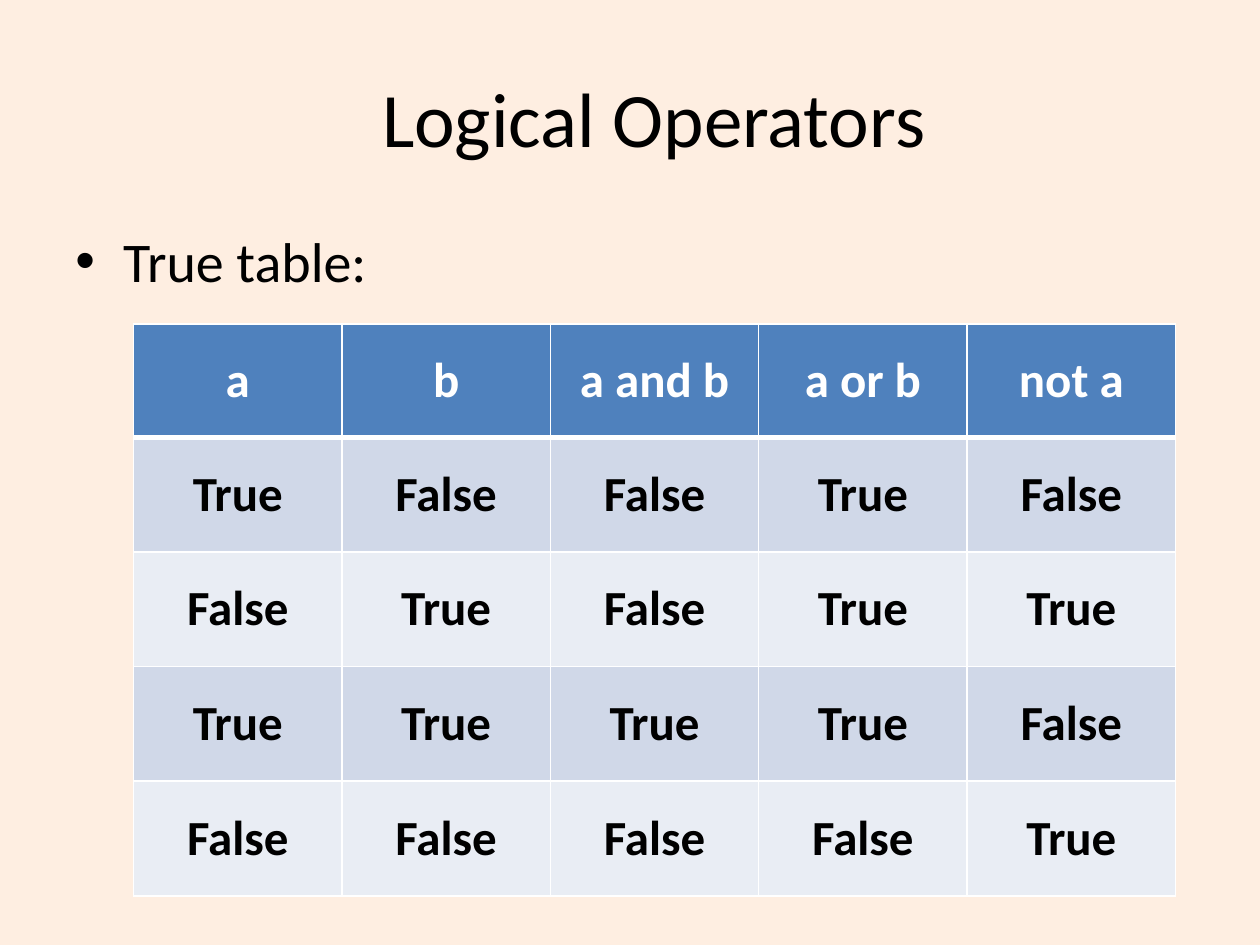
import lxml.etree
import pptx
import pptx.dml.color
import pptx.enum.text
import pptx.oxml.ns
import pptx.util

Inches = pptx.util.Inches
Pt = pptx.util.Pt
qn = pptx.oxml.ns.qn
ALIGN = pptx.enum.text.PP_ALIGN
MIDDLE = pptx.enum.text.MSO_ANCHOR.MIDDLE


def color(hex_code):
    return pptx.dml.color.RGBColor.from_string(hex_code)


def write(frame, text, size=28, fill="000000", bold=False, align=ALIGN.CENTER):
    para = frame.paragraphs[0]
    para.alignment = align
    span = para.add_run()
    span.text = text
    span.font.name = "Calibri"
    span.font.size = Pt(size)
    span.font.bold = bold
    span.font.color.rgb = color(fill)
    return para


deck = pptx.Presentation()
deck.slide_width, deck.slide_height = Inches(10), Inches(7.5)
page = deck.slides.add_slide(deck.slide_layouts[5])
page.background.fill.solid()
page.background.fill.fore_color.rgb = color("FEEEE1")

# Title
title = page.shapes.title
title.left, title.top = Inches(0.5), Inches(0.3)
title.width, title.height = Inches(9.38), Inches(1.25)
title.text_frame.vertical_anchor = MIDDLE
write(title.text_frame, "Logical Operators", size=44)

# Bulleted introduction
body = page.shapes.add_textbox(Inches(0.5), Inches(1.75), Inches(9), Inches(5.39))
body.text_frame.word_wrap = True
para = write(body.text_frame, "True table:", size=32, align=ALIGN.LEFT)
para_format = para._p.get_or_add_pPr()
para_format.set("marL", str(Inches(0.38)))
para_format.set("indent", str(-Inches(0.38)))
lxml.etree.SubElement(para_format, qn("a:buFont"), typeface="Arial")
lxml.etree.SubElement(para_format, qn("a:buChar"), char="•")

# Truth table
truth_rows = [
    ["a", "b", "a and b", "a or b", "not a"],
    ["True", "False", "False", "True", "False"],
    ["False", "True", "False", "True", "True"],
    ["True", "True", "True", "True", "False"],
    ["False", "False", "False", "False", "True"],
]
table = page.shapes.add_table(
    len(truth_rows), len(truth_rows[0]),
    Inches(1.06), Inches(2.57), Inches(8.27), Inches(4.55),
).table

for r, values in enumerate(truth_rows):
    is_header = r == 0
    table.rows[r].height = Inches(0.9 if is_header else 0.91)
    row_fill = "4F81BD" if is_header else ("E9EDF4", "D0D8E8")[r % 2]
    border_widths = {
        "a:lnL": 1,
        "a:lnR": 1,
        "a:lnT": 3 if r == 1 else 1,
        "a:lnB": 3 if is_header else 1,
    }
    for c, value in enumerate(values):
        cell = table.cell(r, c)
        cell.vertical_anchor = MIDDLE
        cell_format = cell._tc.get_or_add_tcPr()
        for side, width in border_widths.items():
            line = lxml.etree.SubElement(cell_format, qn(side), w=str(Pt(width)))
            line_fill = lxml.etree.SubElement(line, qn("a:solidFill"))
            lxml.etree.SubElement(line_fill, qn("a:srgbClr"), val="FFFFFF")
        cell.fill.solid()
        cell.fill.fore_color.rgb = color(row_fill)
        write(cell.text_frame, value, bold=True,
              fill="FFFFFF" if is_header else "000000")

deck.save("out.pptx")
